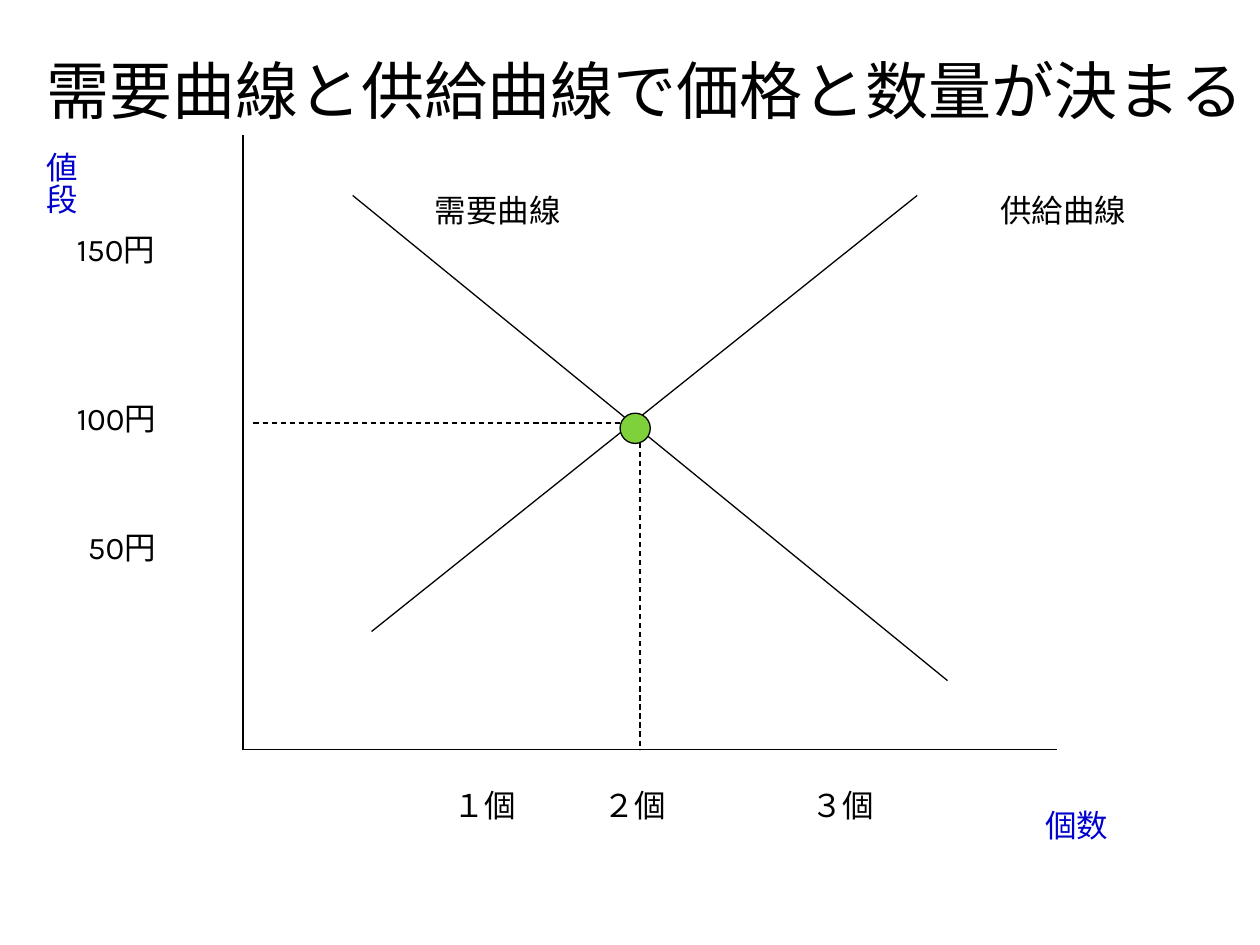
from pptx import Presentation
from pptx.dml.color import RGBColor
from pptx.enum.dml import MSO_LINE_DASH_STYLE as Dash
from pptx.enum.shapes import MSO_CONNECTOR as Connector, MSO_SHAPE as Shape
from pptx.enum.text import MSO_AUTO_SIZE as AutoSize, PP_ALIGN as Align
from pptx.oxml.ns import qn
from pptx.util import Cm, Pt
from lxml.etree import SubElement

BLACK, BLUE, GREEN = "000000", "0000CC", "7FD13B"


def color(value):
    return RGBColor.from_string(value)


class Diagram:
    """Text and line style, applied to the current slide; lengths are in cm."""

    font_name = "Karla"
    label_size = 18
    label_height = 1.02
    line_width = Pt(0.75)

    def __init__(self, page):
        self.shapes = page.shapes

    def stroke(self, line):
        line.color.rgb = color(BLACK)
        line.width = self.line_width

    def line(self, x1, y1, x2, y2, dashed=False):
        connector = self.shapes.add_connector(
            Connector.STRAIGHT, Cm(x1), Cm(y1), Cm(x2), Cm(y2))
        self.stroke(connector.line)
        if dashed:
            connector.line.dash_style = Dash.DASH
        SubElement(connector.element.spPr, qn("a:effectLst"))

    def label(self, text, left, top, width, height=label_height,
              size=label_size, ink=BLACK, align=Align.LEFT, vertical=False):
        box = self.shapes.add_textbox(Cm(left), Cm(top), Cm(width), Cm(height))
        frame = box.text_frame
        frame.word_wrap = True
        frame.auto_size = AutoSize.SHAPE_TO_FIT_TEXT
        if vertical:
            box.element.txBody.bodyPr.set("vert", "eaVert")
        frame.text = text
        para = frame.paragraphs[0]
        para.alignment = align
        font = para.runs[0].font
        font.name = self.font_name
        font.size = Pt(size)
        font.color.rgb = color(ink)

    def dot(self, left, top, diameter, fill):
        oval = self.shapes.add_shape(
            Shape.OVAL, Cm(left), Cm(top), Cm(diameter), Cm(diameter))
        oval.shadow.inherit = False
        oval.fill.solid()
        oval.fill.fore_color.rgb = color(fill)
        self.stroke(oval.line)


def main():
    deck = Presentation()
    deck.slide_width, deck.slide_height = Cm(25.4), Cm(19.05)
    diagram = Diagram(deck.slides.add_slide(deck.slide_layouts[6]))

    # Axes
    origin_x, origin_y = 4.9, 15.11
    diagram.line(origin_x, 2.72, origin_x, origin_y)
    diagram.line(origin_x, origin_y, 21.31, origin_y)
    diagram.label("個数", 19.51, 16.13, 4.39, ink=BLUE, align=Align.CENTER)
    diagram.label("値段", 0.46, 2.82, 1.27, 1.8, ink=BLUE, vertical=True)

    # Supply and demand curves
    diagram.line(7.49, 12.73, 18.49, 3.94)
    diagram.line(7.11, 3.94, 19.1, 13.72)

    # Scale labels
    for text, left, width in (("１個", 8.89, 2.59), ("２個", 11.91, 3),
                              ("３個", 16.1, 2.59)):
        diagram.label(text, left, 15.72, width)
    for text, left, top, width in (("100円", 1.3, 7.92, 3),
                                   ("50円", 1.52, 10.52, 2.41),
                                   ("150円", 1.3, 4.52, 3)):
        diagram.label(text, left, top, width)

    diagram.label("需要曲線と供給曲線で価格と数量が決まる",
                  0.69, 0.91, 24.71, 1.78, size=36)
    diagram.label("供給曲線", 19.91, 3.73, 3.99)
    diagram.label("需要曲線", 8.51, 3.73, 4.8)

    # Equilibrium
    diagram.line(5.11, 8.53, 12.7, 8.53, dashed=True)
    diagram.line(12.9, 8.74, 12.9, origin_y, dashed=True)
    diagram.dot(12.5, 8.33, 0.61, GREEN)

    deck.save("out.pptx")


if __name__ == "__main__":
    main()
